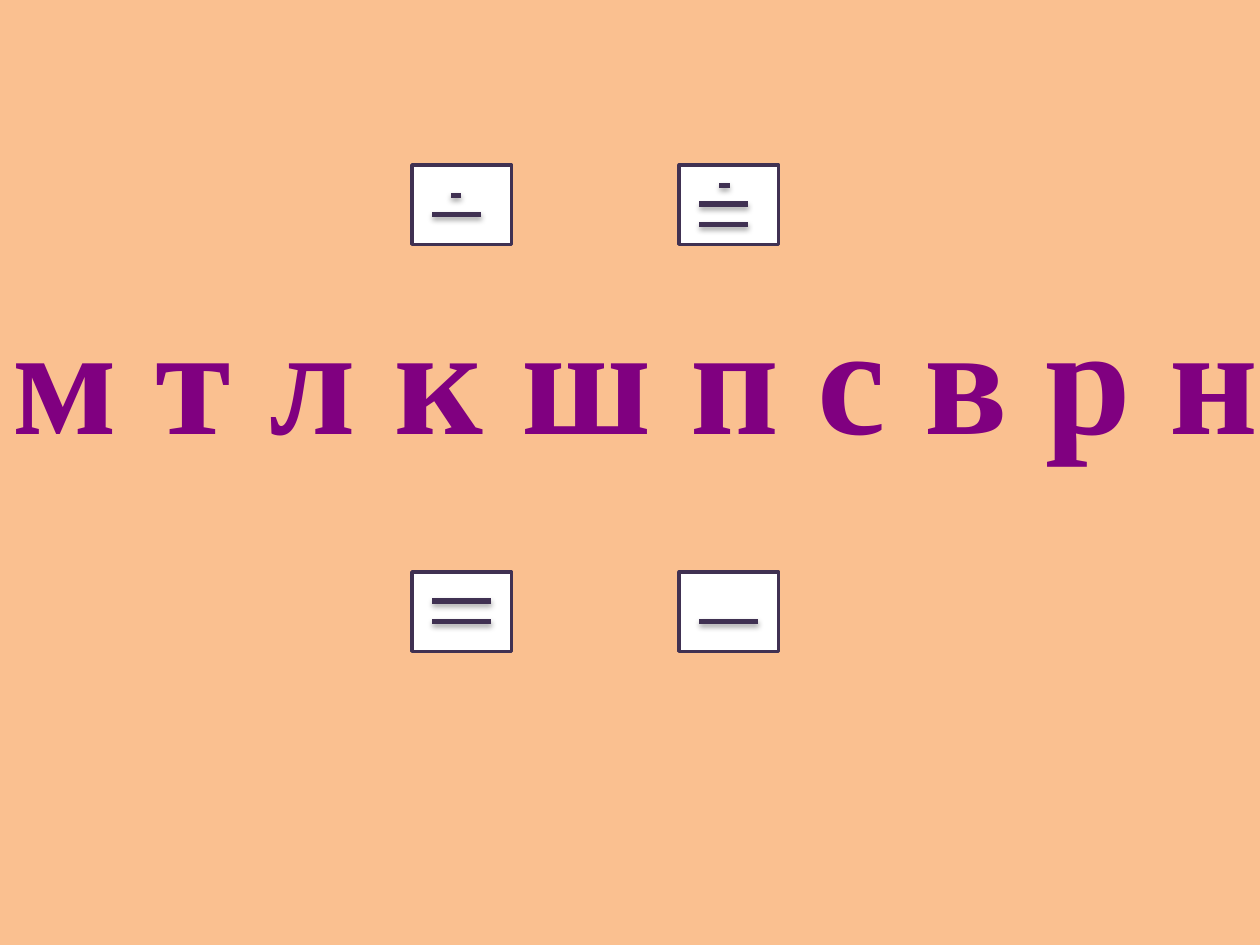
import pptx
import pptx.util
import pptx.dml.color
import pptx.enum.shapes
import pptx.enum.text
import pptx.oxml
import pptx.oxml.ns

Inches = pptx.util.Inches
Pt = pptx.util.Pt
RGB = pptx.dml.color.RGBColor.from_string
COLORS = {"back": "FAC090", "text": "800080", "card": "FFFFFF", "ink": "403152"}
SHADOW = (
    f'<a:effectLst {pptx.oxml.ns.nsdecls("a")}>'
    '<a:outerShdw blurRad="40000" dist="23000" dir="5400000" rotWithShape="0">'
    '<a:srgbClr val="000000"><a:alpha val="35000"/></a:srgbClr>'
    '</a:outerShdw></a:effectLst>'
)

deck = pptx.Presentation()
deck.slide_width = Inches(10)
deck.slide_height = Inches(7.5)
slide = deck.slides.add_slide(deck.slide_layouts[6])
slide.background.fill.solid()
slide.background.fill.fore_color.rgb = RGB(COLORS["back"])

box = slide.shapes.add_textbox(Inches(0), Inches(2.18), Inches(10.2), Inches(1.58))
frame = box.text_frame
frame.word_wrap = False
frame.auto_size = pptx.enum.text.MSO_AUTO_SIZE.SHAPE_TO_FIT_TEXT
frame.text = "м т л к ш п с в р н"
font = frame.paragraphs[0].runs[0].font
font.name = "Times New Roman"
font.size = Pt(88)
font.bold = True
font.color.rgb = RGB(COLORS["text"])

cards = [
    (5.39, 1.31, [(0.32, 0.16, 0.08), (0.16, 0.31, 0.39), (0.16, 0.47, 0.39)]),
    (3.27, 1.31, [(0.31, 0.24, 0.08), (0.16, 0.39, 0.39)]),
    (5.39, 4.54, [(0.16, 0.39, 0.47)]),
    (3.27, 4.54, [(0.16, 0.23, 0.47), (0.16, 0.39, 0.47)]),
]

for left, top, marks in cards:
    card = slide.shapes.add_shape(
        pptx.enum.shapes.MSO_SHAPE.RECTANGLE,
        Inches(left), Inches(top), Inches(0.79), Inches(0.63))
    card.shadow.inherit = False
    card.fill.solid()
    card.fill.fore_color.rgb = RGB(COLORS["card"])
    card.line.color.rgb = RGB(COLORS["ink"])
    card.line.width = Pt(2)

    for dx, dy, width in marks:
        start, y = left + dx, Inches(top + dy)
        mark = slide.shapes.add_connector(
            pptx.enum.shapes.MSO_CONNECTOR.STRAIGHT,
            Inches(start), y, Inches(start + width), y)
        mark.line.color.rgb = RGB(COLORS["ink"])
        mark.line.width = Pt(3)
        mark._element.spPr.append(pptx.oxml.parse_xml(SHADOW))

deck.save("out.pptx")
